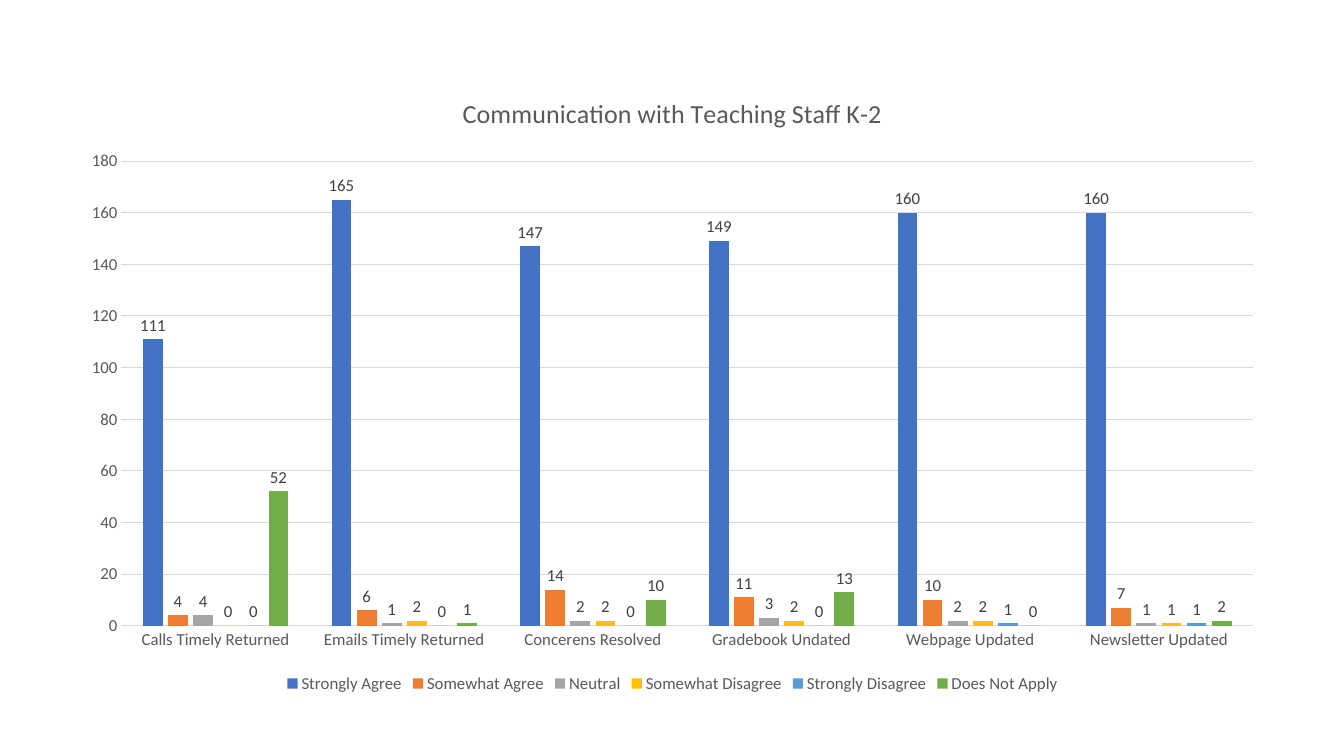
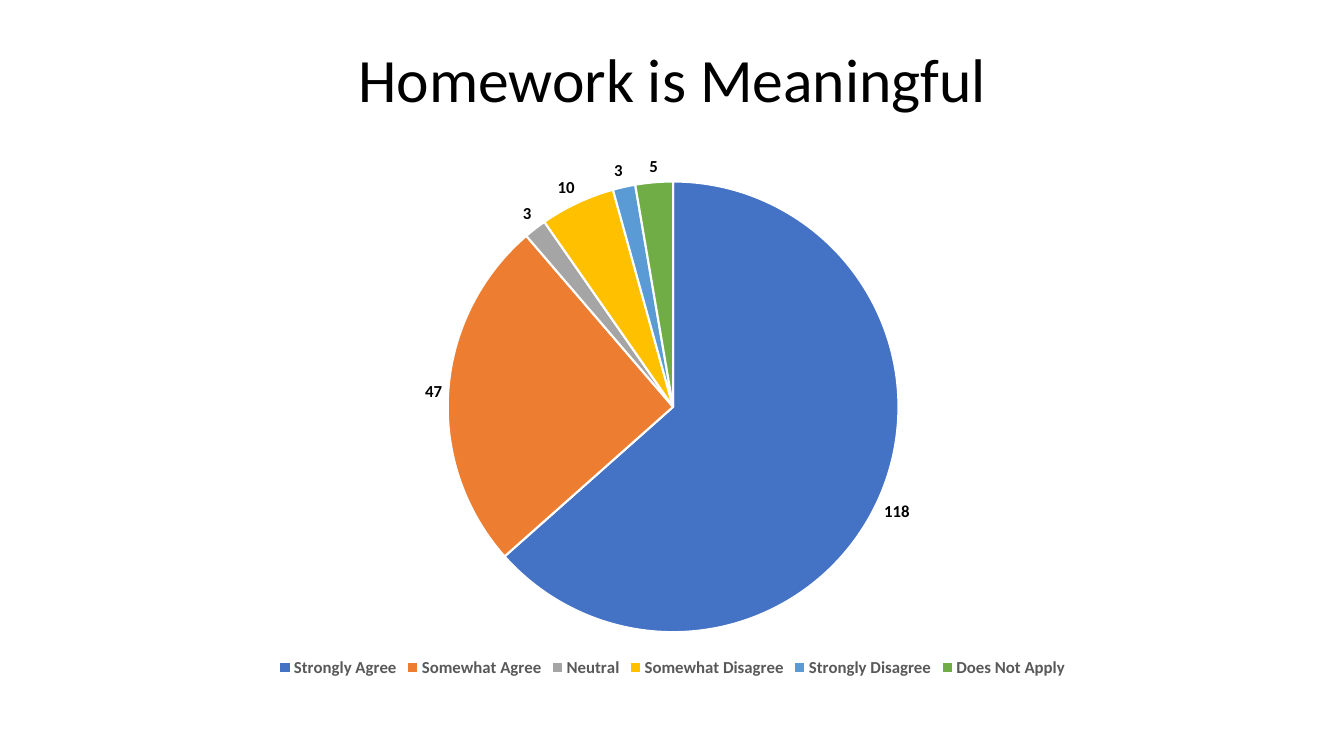
import pptx
import pptx.chart.data
import pptx.dml.color
import pptx.enum.chart
import pptx.enum.text
import pptx.util

Inches = pptx.util.Inches
Pt = pptx.util.Pt

FONT = "Calibri"
BLACK, WHITE = "000000", "FFFFFF"
TEXT_GRAY, LABEL_GRAY, LINE_GRAY = "595959", "404040", "D9D9D9"

ANSWERS = [
    ("Strongly Agree", "4472C4"),
    ("Somewhat Agree", "ED7D31"),
    ("Neutral", "A5A5A5"),
    ("Somewhat Disagree", "FFC000"),
    ("Strongly Disagree", "5B9BD5"),
    ("Does Not Apply", "70AD47"),
]

COMMUNICATION_TITLE = "Communication with Teaching Staff K-2"
# Counts follow the order of ANSWERS
COMMUNICATION = {
    "Calls Timely Returned": (111, 4, 4, 0, 0, 52),
    "Emails Timely Returned": (165, 6, 1, 2, 0, 1),
    "Concerens Resolved": (147, 14, 2, 2, 0, 10),
    "Gradebook Undated": (149, 11, 3, 2, 0, 13),
    "Webpage Updated": (160, 10, 2, 2, 1, 0),
    "Newsletter Updated": (160, 7, 1, 1, 1, 2),
}

HOMEWORK_TITLE = "Homework is Meaningful"
HOMEWORK = (118, 47, 3, 10, 3, 5)


def rgb(color):
    return pptx.dml.color.RGBColor.from_string(color)


def style_font(font, size, color, bold=False):
    font.name = FONT
    font.size = Pt(size)
    font.bold = bold
    font.color.rgb = rgb(color)


def fill_solid(chart_format, color):
    chart_format.fill.solid()
    chart_format.fill.fore_color.rgb = rgb(color)


def style_line(line, color, width):
    line.color.rgb = rgb(color)
    line.width = Pt(width)


def add_chart(slide, kind, data, box, bold=False):
    """Add a chart with the shared font and a legend at the bottom."""
    frame = slide.shapes.add_chart(kind, *map(Inches, box), data)
    chart = frame.chart
    style_font(chart.font, 10, BLACK)
    chart.has_title = False
    chart.has_legend = True
    chart.legend.position = pptx.enum.chart.XL_LEGEND_POSITION.BOTTOM
    chart.legend.include_in_layout = False
    style_font(chart.legend.font, 12, TEXT_GRAY, bold)
    return chart


def show_values(series, color, bold=False):
    labels = series.data_labels
    labels.show_value = True
    labels.position = pptx.enum.chart.XL_LABEL_POSITION.OUTSIDE_END
    style_font(labels.font, 12, color, bold)


def style_axis(axis):
    axis.major_tick_mark = pptx.enum.chart.XL_TICK_MARK.NONE
    axis.minor_tick_mark = pptx.enum.chart.XL_TICK_MARK.NONE
    style_font(axis.tick_labels.font, 12, TEXT_GRAY)


def build_communication_slide(slide):
    data = pptx.chart.data.CategoryChartData()
    data.categories = list(COMMUNICATION)
    for (answer, _), counts in zip(ANSWERS, zip(*COMMUNICATION.values())):
        data.add_series(answer, counts)
    chart = add_chart(slide, pptx.enum.chart.XL_CHART_TYPE.COLUMN_CLUSTERED,
                      data, (0.67, 0.72, 12, 6.2))

    chart.has_title = True
    run = chart.chart_title.text_frame.paragraphs[0].add_run()
    run.text = COMMUNICATION_TITLE
    style_font(run.font, 18.6, TEXT_GRAY)

    style_axis(chart.category_axis)
    style_line(chart.category_axis.format.line, LINE_GRAY, 0.75)
    style_axis(chart.value_axis)
    chart.value_axis.format.line.fill.background()
    style_line(chart.value_axis.major_gridlines.format.line, LINE_GRAY, 0.75)

    plot = chart.plots[0]
    plot.vary_by_categories = False
    plot.gap_width = 219
    plot.overlap = -27
    for series, (_, color) in zip(plot.series, ANSWERS):
        fill_solid(series.format, color)
        show_values(series, LABEL_GRAY)


def add_title(slide, text):
    box = slide.shapes.add_textbox(*map(Inches, (0.92, 0.4, 11.5, 0.83)))
    frame = box.text_frame
    frame.word_wrap = True
    frame.vertical_anchor = pptx.enum.text.MSO_ANCHOR.MIDDLE
    paragraph = frame.paragraphs[0]
    paragraph.alignment = pptx.enum.text.PP_ALIGN.CENTER
    paragraph.line_spacing = 0.9
    run = paragraph.add_run()
    run.text = text
    style_font(run.font, 44, BLACK)


def build_homework_slide(slide):
    add_title(slide, HOMEWORK_TITLE)
    data = pptx.chart.data.CategoryChartData()
    data.categories = [answer for answer, _ in ANSWERS]
    data.add_series("Series 1", HOMEWORK)
    chart = add_chart(slide, pptx.enum.chart.XL_CHART_TYPE.PIE,
                      data, (0.92, 1.41, 11.5, 5.35), bold=True)

    plot = chart.plots[0]
    plot.vary_by_categories = True
    series = plot.series[0]
    for index, (_, color) in enumerate(ANSWERS):
        slice_format = series.points[index].format
        fill_solid(slice_format, color)
        style_line(slice_format.line, WHITE, 1.5)
    show_values(series, BLACK, bold=True)


def main():
    presentation = pptx.Presentation()
    presentation.slide_width = Inches(13.33)
    presentation.slide_height = Inches(7.5)
    blank_layout = presentation.slide_layouts[6]
    for build in (build_communication_slide, build_homework_slide):
        build(presentation.slides.add_slide(blank_layout))
    presentation.save("out.pptx")


if __name__ == "__main__":
    main()
